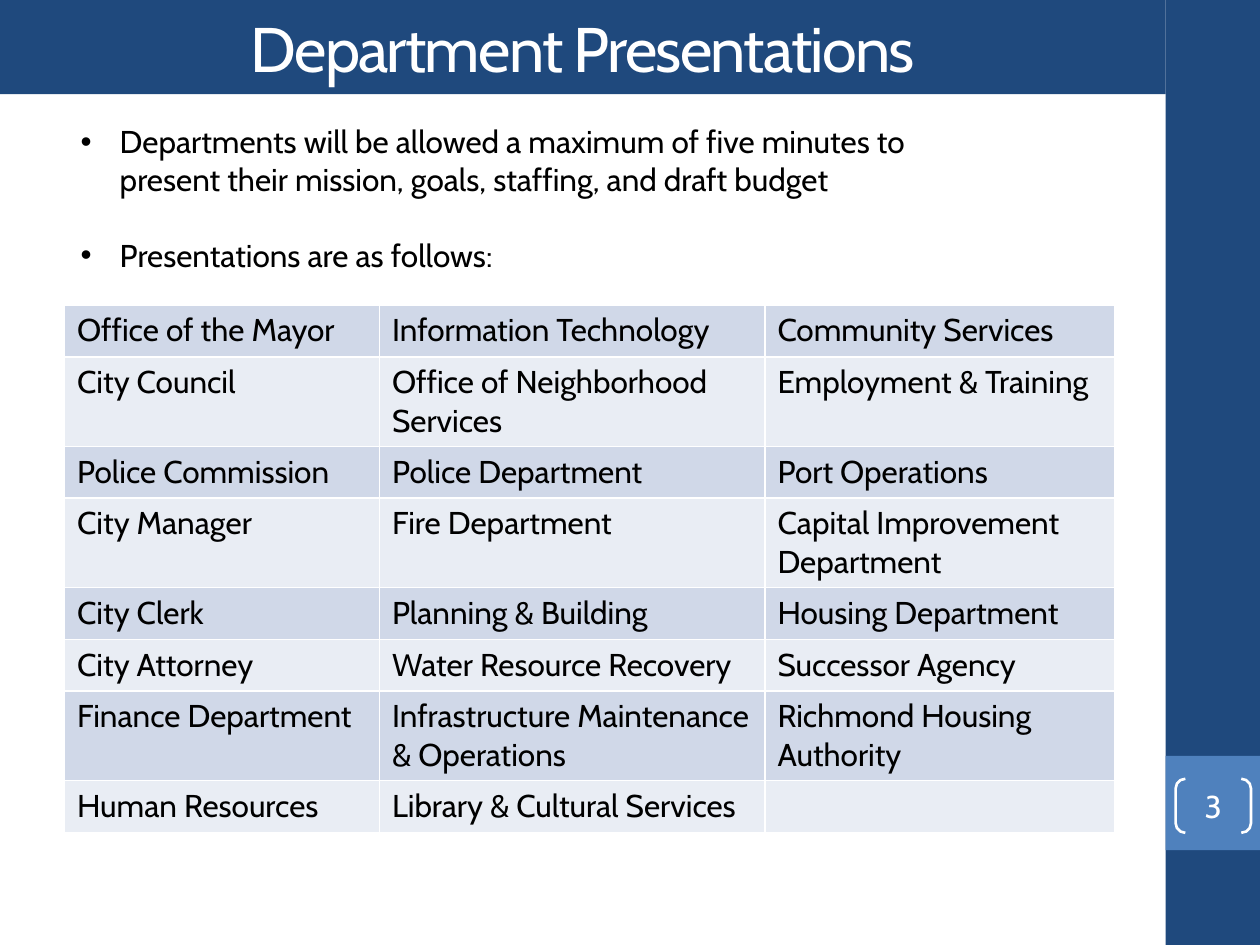
import pptx
import pptx.dml.color
import pptx.enum.shapes
import pptx.enum.text
import pptx.oxml
import pptx.oxml.ns
import pptx.util
from dataclasses import dataclass

Cm = pptx.util.Cm
Pt = pptx.util.Pt
RGBColor = pptx.dml.color.RGBColor
MSO_SHAPE = pptx.enum.shapes.MSO_SHAPE
PP_ALIGN = pptx.enum.text.PP_ALIGN
MSO_ANCHOR = pptx.enum.text.MSO_ANCHOR

NAVY = RGBColor(0x1F, 0x49, 0x7D)
BLUE = RGBColor(0x4F, 0x81, 0xBD)
WHITE = RGBColor(0xFF, 0xFF, 0xFF)
BLACK = RGBColor(0, 0, 0)
BAND_DARK = RGBColor(0xD0, 0xD8, 0xE8)
BAND_LIGHT = RGBColor(0xE9, 0xED, 0xF4)
FONT = "Cabin"


@dataclass
class Box:
    left: float
    top: float
    width: float
    height: float

    def lengths(self) -> tuple:
        return Cm(self.left), Cm(self.top), Cm(self.width), Cm(self.height)


@dataclass
class Panel:
    box: Box
    color: RGBColor


TITLE_BOX = Box(0, 0, 23.5, 1.9)
BODY_BOX = Box(1.37, 2.34, 18.42, 3.33)
TABLE_BOX = Box(1.3, 6.15, 21.18, 8.35)
NUMBER_BOX = Box(23.7, 15.7, 1.52, 1.09)
PANELS = [
    Panel(Box(23.5, 0, 1.9, 19.05), NAVY),
    Panel(Box(23.5, 15.24, 1.9, 1.9), BLUE),
]
BULLETS = [
    "Departments will be allowed a maximum of five minutes to present "
    "their mission, goals, staffing, and draft budget",
    "Presentations are as follows:",
]
COLUMN_WIDTHS = [6.35, 7.77, 7.06]
DEPARTMENTS = [
    ("Office of the Mayor", "Information Technology", "Community Services"),
    ("City Council", "Office of Neighborhood Services", "Employment & Training"),
    ("Police Commission", "Police Department", "Port Operations"),
    ("City Manager", "Fire Department", "Capital Improvement Department"),
    ("City Clerk", "Planning & Building", "Housing Department"),
    ("City Attorney", "Water Resource Recovery", "Successor Agency"),
    ("Finance Department", "Infrastructure Maintenance & Operations",
     "Richmond Housing Authority"),
    ("Human Resources", "Library & Cultural Services", ""),
]


def place(sp, box: Box) -> None:
    sp.left, sp.top, sp.width, sp.height = box.lengths()


def format_paragraph(p, color: RGBColor, size: int = 18, align=PP_ALIGN.LEFT) -> None:
    p.alignment = align
    p.font.name = FONT
    p.font.size = Pt(size)
    p.font.color.rgb = color


def add_panel(s, panel: Panel) -> None:
    sp = s.shapes.add_shape(MSO_SHAPE.RECTANGLE, *panel.box.lengths())
    sp.shadow.inherit = False
    sp.fill.solid()
    sp.fill.fore_color.rgb = panel.color
    sp.line.fill.background()


def fill_title(s) -> None:
    sp = s.shapes.title
    place(sp, TITLE_BOX)
    sp.fill.solid()
    sp.fill.fore_color.rgb = NAVY
    tf = sp.text_frame
    tf.auto_size = pptx.enum.text.MSO_AUTO_SIZE.NONE
    tf.vertical_anchor = MSO_ANCHOR.MIDDLE
    p = tf.paragraphs[0]
    r = p.add_run()
    r.text = "Department Presentations"
    r.font._element.set("spc", "-100")
    format_paragraph(p, WHITE, 36, PP_ALIGN.CENTER)


def fill_body(s) -> None:
    sp = s.placeholders[1]
    place(sp, BODY_BOX)
    tf = sp.text_frame
    tf.auto_size = pptx.enum.text.MSO_AUTO_SIZE.NONE
    tf.text = "\n".join(BULLETS)
    for i, p in enumerate(tf.paragraphs):
        format_paragraph(p, BLACK)
        p.space_before = Pt(21.5 if i else 0)
        pPr = p._p.get_or_add_pPr()
        pPr.set("marL", str(Cm(0.79)))
        pPr.set("indent", str(Cm(-0.79)))


def add_borders(cell) -> None:
    tcPr = cell._tc.get_or_add_tcPr()
    for side in "LRTB":
        tcPr.append(pptx.oxml.parse_xml(
            f'<a:ln{side} {pptx.oxml.ns.nsdecls("a")} w="{Pt(1)}">'
            f'<a:solidFill><a:srgbClr val="{WHITE}"/></a:solidFill></a:ln{side}>'))


def add_department_table(s) -> None:
    table = s.shapes.add_table(
        len(DEPARTMENTS), len(COLUMN_WIDTHS), *TABLE_BOX.lengths()).table
    table.first_row = False
    table.horz_banding = False
    for column, width in zip(table.columns, COLUMN_WIDTHS):
        column.width = Cm(width)
    for i, names in enumerate(DEPARTMENTS):
        for cell, name in zip(table.rows[i].cells, names):
            cell.text = name
            format_paragraph(cell.text_frame.paragraphs[0], BLACK)
            add_borders(cell)
            cell.fill.solid()
            cell.fill.fore_color.rgb = BAND_LIGHT if i % 2 else BAND_DARK


def add_page_number(s, number: int) -> None:
    sp = s.shapes.add_shape(MSO_SHAPE.DOUBLE_BRACKET, *NUMBER_BOX.lengths())
    sp.adjustments[0] = 0.18
    sp.shadow.inherit = False
    sp.fill.background()
    sp.line.color.rgb = WHITE
    sp.line.width = Pt(1.5)
    tf = sp.text_frame
    tf.margin_left = tf.margin_right = tf.margin_top = tf.margin_bottom = 0
    tf.vertical_anchor = MSO_ANCHOR.MIDDLE
    tf.text = str(number)
    format_paragraph(tf.paragraphs[0], WHITE, align=PP_ALIGN.CENTER)


def main() -> None:
    prs = pptx.Presentation()
    prs.slide_width, prs.slide_height = Cm(25.4), Cm(19.05)
    s = prs.slides.add_slide(prs.slide_layouts[1])
    for panel in PANELS:
        add_panel(s, panel)
    fill_title(s)
    fill_body(s)
    add_department_table(s)
    add_page_number(s, 3)
    prs.save("out.pptx")


if __name__ == "__main__":
    main()
